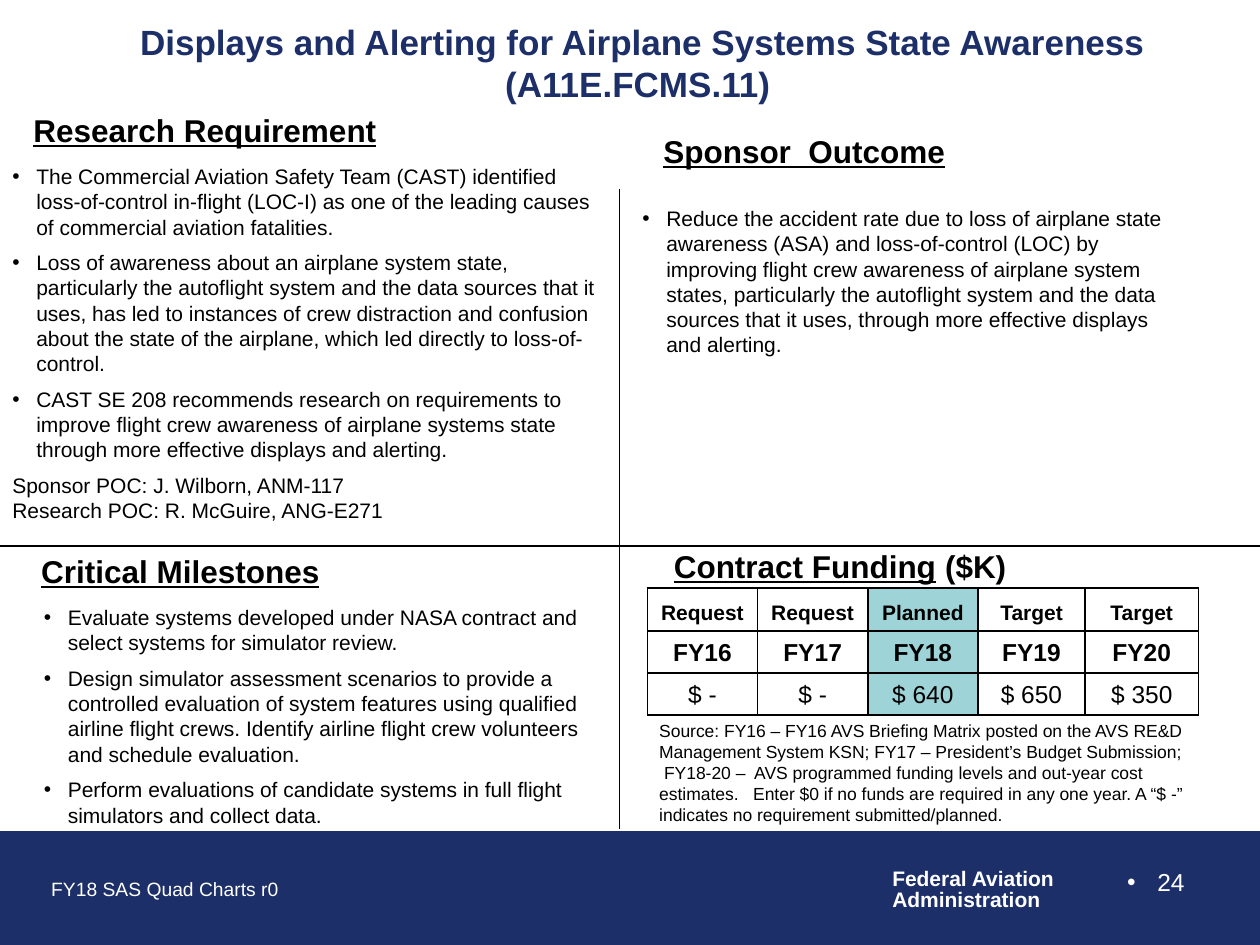
from lxml import etree
from pptx import Presentation
from pptx.dml.color import RGBColor
from pptx.enum.shapes import MSO_CONNECTOR, MSO_SHAPE
from pptx.enum.text import MSO_ANCHOR, MSO_AUTO_SIZE, PP_ALIGN
from pptx.oxml.ns import qn
from pptx.util import Emu, Inches, Pt

LEFT, CENTER, RIGHT = PP_ALIGN.LEFT, PP_ALIGN.CENTER, PP_ALIGN.RIGHT
MIDDLE, BOTTOM = MSO_ANCHOR.MIDDLE, MSO_ANCHOR.BOTTOM
NO_FIT = MSO_AUTO_SIZE.NONE
RECTANGLE, STRAIGHT = MSO_SHAPE.RECTANGLE, MSO_CONNECTOR.STRAIGHT
COLORS = {"navy": "1D2F68", "black": "000000", "white": "FFFFFF", "planned": "9ED3D7"}
FONT = "Arial"
COLUMNS, ROWS = 120, 90
CELL = Inches(10) / COLUMNS
MID_COLUMN, MID_ROW, FOOTER_ROW = 59, 52, 79.2
HANG = 0.19

REQUIREMENTS = [
    "The Commercial Aviation Safety Team (CAST) identified loss-of-control in-flight (LOC-I) "
    "as one of the leading causes of commercial aviation fatalities.",
    "Loss of awareness about an airplane system state, particularly the autoflight system and "
    "the data sources that it uses, has led to instances of crew distraction and confusion about "
    "the state of the airplane, which led directly to loss-of-control.",
    "CAST SE 208 recommends research on requirements to improve flight crew awareness of "
    "airplane systems state through more effective displays and alerting.",
]
CONTACTS = ["Sponsor POC: J. Wilborn, ANM-117", "Research POC: R. McGuire, ANG-E271"]
OUTCOMES = [
    "Reduce the accident rate due to loss of airplane state awareness (ASA) and "
    "loss-of-control (LOC) by improving flight crew awareness of airplane system states, "
    "particularly the autoflight system and the data sources that it uses, through more "
    "effective displays and alerting.",
]
MILESTONES = [
    "Evaluate systems developed under NASA contract and select systems for simulator review.",
    "Design simulator assessment scenarios to provide a controlled evaluation of system features "
    "using qualified airline flight crews. Identify airline flight crew volunteers and schedule "
    "evaluation.",
    "Perform evaluations of candidate systems in full flight simulators and collect data.",
]
SOURCE_NOTE = (
    "Source: FY16 – FY16 AVS Briefing Matrix posted on the AVS RE&D Management System KSN; "
    "FY17 – President’s Budget Submission;  FY18-20 –  AVS programmed funding levels and "
    "out-year cost estimates.   Enter $0 if no funds are required in any one year. "
    "A “$ -” indicates no requirement submitted/planned."
)
FUNDING = [
    ["Request", "Request", "Planned", "Target", "Target"],
    ["FY16", "FY17", "FY18", "FY19", "FY20"],
    ["$ -", "$ -", "$ 640", "$ 650", "$ 350"],
]
FUNDING_WIDTHS = [10.5, 10.5, 10.5, 10.2, 10.8]
PLANNED_COLUMN = 2


def rgb(name):
    return RGBColor.from_string(COLORS[name])


def grid(*cells):
    return [Emu(round(cell * CELL)) for cell in cells]


def add_bullet(paragraph, hang):
    properties = paragraph._p.get_or_add_pPr()
    properties.set("marL", str(Inches(hang)))
    properties.set("indent", str(-Inches(hang)))
    etree.SubElement(properties, qn("a:buFont")).set("typeface", FONT)
    etree.SubElement(properties, qn("a:buChar")).set("char", "•")


def write(frame, text, size=12, color="black", bold=False, underline=False,
          align=LEFT, hang=0, before=0, spacing=None, more=False):
    """Write one paragraph, after the existing ones when more is set."""
    paragraph = frame.add_paragraph() if more else frame.paragraphs[0]
    if hang:
        add_bullet(paragraph, hang)
    paragraph.alignment = align
    if more and before:
        paragraph.space_before = Pt(before)
    if spacing:
        paragraph.line_spacing = spacing
    run = paragraph.add_run()
    run.text = text
    font = run.font
    font.name, font.size, font.bold, font.underline = FONT, Pt(size), bold, underline
    font.color.rgb = rgb(color)
    return paragraph


def add_frame(slide, area, wrap=True):
    frame = slide.shapes.add_textbox(*grid(*area)).text_frame
    frame.word_wrap = wrap
    return frame


def add_heading(slide, area, text, suffix=""):
    frame = add_frame(slide, area)
    paragraph = write(frame, text, size=18, bold=True, underline=True)
    if suffix:
        run = paragraph.add_run()
        run.text = suffix
        run.font.name, run.font.size, run.font.bold = FONT, Pt(18), True
        run.font.color.rgb = rgb("black")


def add_bullets(slide, area, items):
    frame = add_frame(slide, area)
    for index, item in enumerate(items):
        write(frame, item, hang=HANG, before=6, more=index > 0)
    return frame


def add_divider(slide, *ends):
    divider = slide.shapes.add_connector(STRAIGHT, *grid(*ends))
    divider.line.color.rgb = rgb("black")
    divider.line.width = Pt(0.75)
    etree.SubElement(divider._element.spPr, qn("a:effectLst"))


def add_borders(cell):
    properties = cell._tc.get_or_add_tcPr()
    for index, side in enumerate(("lnL", "lnR", "lnT", "lnB")):
        border = etree.Element(qn(f"a:{side}"), w=str(Pt(1)))
        fill = etree.SubElement(border, qn("a:solidFill"))
        etree.SubElement(fill, qn("a:srgbClr")).set("val", COLORS["black"])
        properties.insert(index, border)


def add_funding(slide):
    area = grid(61.65, 56, sum(FUNDING_WIDTHS), 12.1)
    table = slide.shapes.add_table(len(FUNDING), len(FUNDING_WIDTHS), *area).table
    table.first_row = table.horz_banding = False
    for column, width in zip(table.columns, grid(*FUNDING_WIDTHS)):
        column.width = width
    for row, height in zip(table.rows, grid(4.1, 4, 4)):
        row.height = height
    for r, values in enumerate(FUNDING):
        for c, value in enumerate(values):
            cell = table.cell(r, c)
            cell.vertical_anchor = BOTTOM
            cell.fill.solid()
            cell.fill.fore_color.rgb = rgb("planned" if c == PLANNED_COLUMN else "white")
            add_borders(cell)
            write(cell.text_frame, value, size=14 if r else 12, bold=r < 2, align=CENTER)


def add_footer(slide):
    band = slide.shapes.add_shape(RECTANGLE, *grid(0, FOOTER_ROW, COLUMNS, 10.7))
    band.shadow.inherit = False
    band.fill.solid()
    band.fill.fore_color.rgb = band.line.color.rgb = rgb("navy")
    band.line.width = Pt(0.75)
    agency = add_frame(slide, (83.8, 82.2, 18, 5.3), wrap=False)
    for index, line in enumerate(("Federal Aviation", "Administration")):
        write(agency, line, color="white", bold=True, spacing=0.85, more=index > 0)
    write(add_frame(slide, (86, 82, 28, 6.2)), "24", size=14, color="white",
          align=RIGHT, hang=0.24)
    write(add_frame(slide, (3.7, 83, 24.2, 3.5), wrap=False),
          "FY18 SAS Quad Charts r0", size=11, color="white")


def add_title(slide, text):
    title = slide.shapes.title
    title.left, title.top, title.width, title.height = grid(5.6, 2, 111.2, 8)
    frame = title.text_frame
    frame.auto_size, frame.word_wrap, frame.vertical_anchor = NO_FIT, True, MIDDLE
    write(frame, text, size=20, color="navy", bold=True, align=CENTER)


def main():
    deck = Presentation()
    deck.slide_width, deck.slide_height = grid(COLUMNS, ROWS)
    slide = deck.slides.add_slide(deck.slide_layouts[5])
    add_footer(slide)
    add_title(slide, "Displays and Alerting for Airplane Systems State Awareness (A11E.FCMS.11) ")
    add_heading(slide, (2, 10, 60, 4), "Research Requirement")
    add_heading(slide, (62, 12, 56, 4), "Sponsor  Outcome")
    add_heading(slide, (2.75, MID_ROW, 54, 4.5), "Critical Milestones")
    add_heading(slide, (63, 51.5, 53, 4.5), "Contract Funding", " ($K)")
    add_divider(slide, MID_COLUMN, 18, MID_COLUMN, 79)
    add_divider(slide, 0, MID_ROW, COLUMNS, MID_ROW)
    add_funding(slide)
    add_bullets(slide, (60, 19, 53, 15.7), OUTCOMES)
    add_bullets(slide, (3, 57, 56, 23), MILESTONES)
    write(add_frame(slide, (61.6, 68, 52.4, 14.3)), SOURCE_NOTE, size=10)
    research = add_bullets(slide, (0, 15, MID_COLUMN, 39.8), REQUIREMENTS)
    for contact, before in zip(CONTACTS, (6, 0)):
        write(research, contact, before=before, more=True)
    deck.save("out.pptx")


if __name__ == "__main__":
    main()
